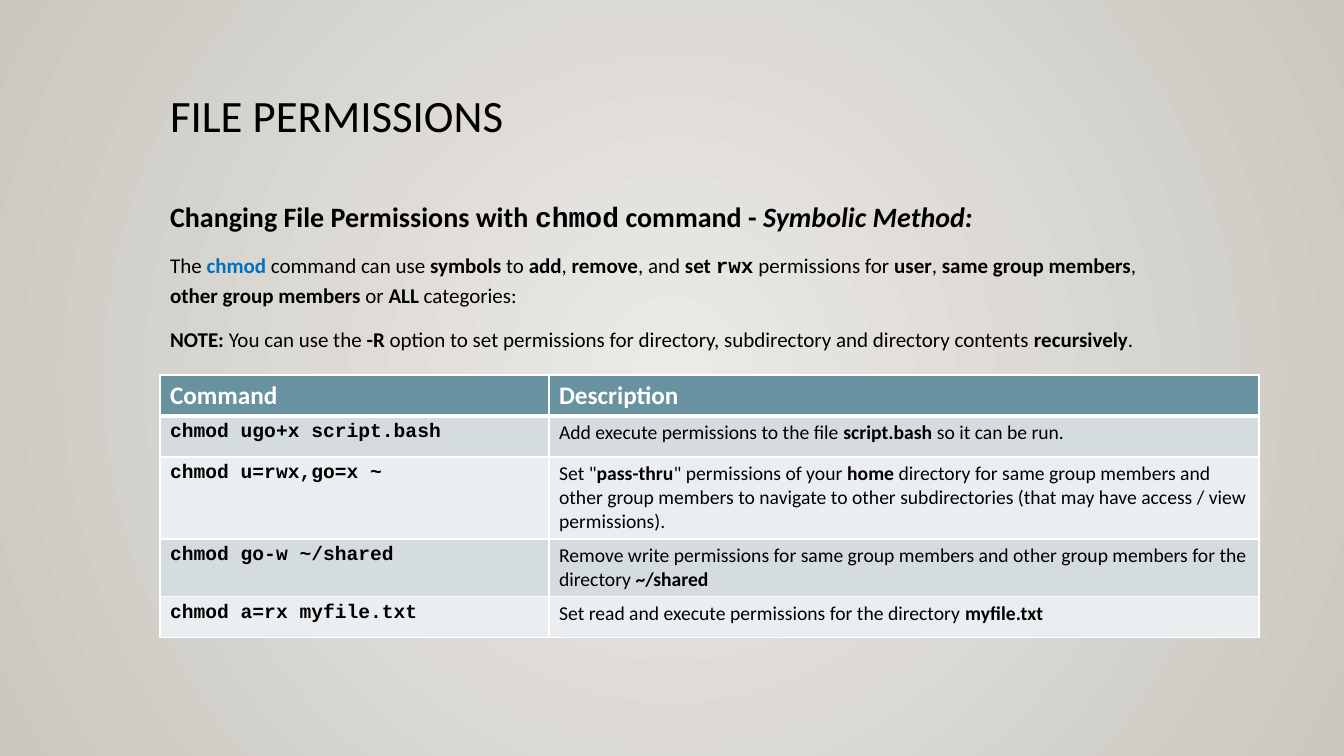
from lxml.etree import SubElement
from pptx import Presentation
from pptx.dml.color import RGBColor
from pptx.enum.text import MSO_ANCHOR, MSO_AUTO_SIZE, PP_ALIGN
from pptx.oxml import parse_xml
from pptx.oxml.ns import nsdecls, qn
from pptx.util import Pt

PX = 914400 / 100.8
COLORS = {
    "text": "000000", "link": "0070C0", "white": "FFFFFF",
    "center": "ECEAE7", "edge": "CAC7C1",
    "header": "6892A0", "odd": "D4DCDF", "even": "EBEEF0",
}
MONO = "Courier New"


def px(n):
    return round(n * PX)


def add_text(p, text, size, font="Calibri", color="text", bold=False, italic=False):
    """Add runs to a paragraph; each ** in the text toggles bold."""
    for i, part in enumerate(text.split("**")):
        if part:
            r = p.add_run()
            r.text = part
            r.font.size = Pt(size)
            r.font.name = font
            r.font.bold = bold != (i % 2 == 1)
            r.font.italic = italic
            r.font.color.rgb = RGBColor.from_string(COLORS[color])


prs = Presentation()
prs.slide_width, prs.slide_height = px(1344), px(756)
s = prs.slides.add_slide(prs.slide_layouts[1])

# Radial background
fill = s.background.fill
fill.gradient()
for stop, name in zip(fill.gradient_stops, ("center", "edge")):
    stop.color.rgb = RGBColor.from_string(COLORS[name])
lin = next(s.element.iter(qn("a:lin")))
lin.getparent().replace(lin, parse_xml(
    f'<a:path {nsdecls("a")} path="circle">'
    '<a:fillToRect l="50000" t="50000" r="50000" b="50000"/></a:path>'))

# Title and body
title, body = s.placeholders
for sp, box in ((title, (160, 89, 1058, 116)), (body, (160, 188, 1024, 217))):
    sp.left, sp.top, sp.width, sp.height = map(px, box)
    tf = sp.text_frame
    tf.word_wrap = True
    tf.auto_size = MSO_AUTO_SIZE.NONE
    tf.vertical_anchor = MSO_ANCHOR.TOP

p = title.text_frame.paragraphs[0]
p.alignment = PP_ALIGN.LEFT
p.line_spacing = 0.9
add_text(p, "FILE PERMISSIONS", 32)

paragraphs = [
    (20, [
        ("Changing File Permissions with ", dict(bold=True)),
        ("chmod", dict(font=MONO, bold=True)),
        (" command - ", dict(bold=True)),
        ("Symbolic Method:", dict(bold=True, italic=True)),
    ]),
    (15, [
        ("The ", {}),
        ("chmod", dict(color="link", bold=True)),
        (" command can use **symbols** to **add**, **remove**, and **set **", {}),
        ("rwx", dict(font=MONO, bold=True)),
        (" permissions for **user**, **same group members**, "
         "**other group members **or **ALL** categories:", {}),
    ]),
    (15, [
        ("**NOTE:** You can use the **-R** option to set permissions for directory, "
         "subdirectory and directory contents **recursively**.", {}),
    ]),
]
tf = body.text_frame
for i, (size, parts) in enumerate(paragraphs):
    p = tf.add_paragraph() if i else tf.paragraphs[0]
    pPr = p._p.get_or_add_pPr()
    pPr.set("marL", "0")
    pPr.set("indent", "0")
    SubElement(pPr, qn("a:buNone"))
    p.line_spacing = 1.2
    p.space_before = Pt(10 if i else 0)
    for text, fmt in parts:
        add_text(p, text, size, **fmt)

# Command table
rows = [
    ("Command", "Description"),
    ("chmod ugo+x script.bash",
     "Add execute permissions to the file **script.bash** so it can be run."),
    ("chmod u=rwx,go=x ~",
     'Set "**pass-thru**" permissions of your **home** directory for same group members '
     "and other group members to navigate to other subdirectories "
     "(that may have access / view permissions)."),
    ("chmod go-w ~/shared",
     "Remove write permissions for same group members and other group members "
     "for the directory **~/shared**"),
    ("chmod a=rx myfile.txt",
     "Set read and execute permissions for the directory **myfile.txt**"),
]
col_widths = (389, 710)
row_heights = (41, 41, 82, 57, 41)
table = s.shapes.add_table(len(rows), 2, px(160), px(375),
                           px(sum(col_widths)), px(sum(row_heights))).table
for col, width in zip(table.columns, col_widths):
    col.width = px(width)
for y, (row, height) in enumerate(zip(rows, row_heights)):
    table.rows[y].height = px(height)
    for x, text in enumerate(row):
        cell = table.cell(y, x)
        tcPr = cell._tc.get_or_add_tcPr()
        for side in "LRTB":
            heavy = (y, side) in ((0, "B"), (1, "T"))
            tcPr.append(parse_xml(
                f'<a:ln{side} {nsdecls("a")} w="{Pt(3 if heavy else 1)}"><a:solidFill>'
                f'<a:srgbClr val="{COLORS["white"]}"/></a:solidFill></a:ln{side}>'))
        name = "header" if y == 0 else "odd" if y % 2 else "even"
        cell.fill.solid()
        cell.fill.fore_color.rgb = RGBColor.from_string(COLORS[name])
        p = cell.text_frame.paragraphs[0]
        if y == 0:
            add_text(p, text, 18, color="white", bold=True)
        elif x == 0:
            add_text(p, text, 14, font=MONO, bold=True)
        else:
            add_text(p, text, 14)

prs.save("out.pptx")
